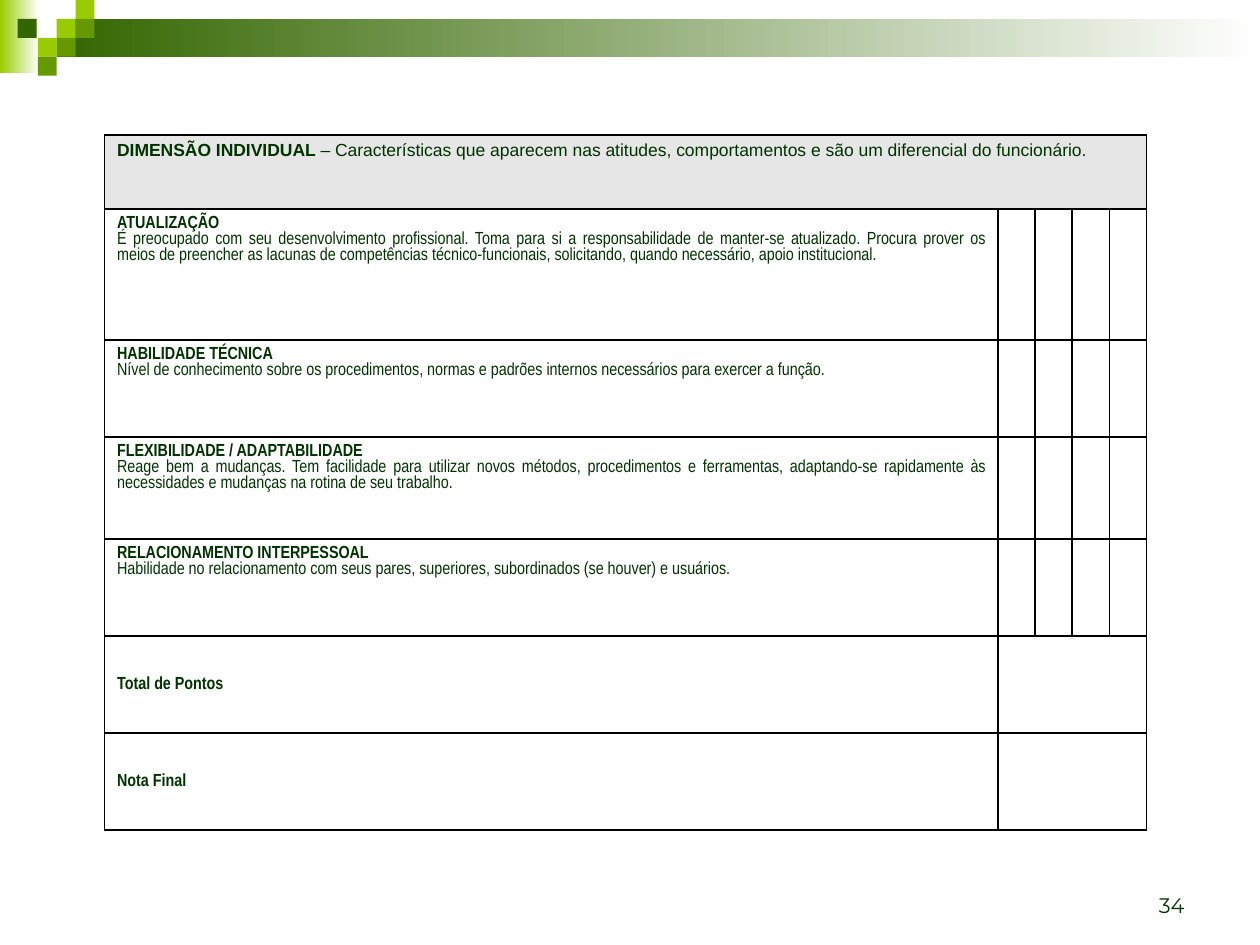
from typing import NamedTuple

from lxml.etree import SubElement
from pptx import Presentation
from pptx.dml.color import RGBColor
from pptx.enum.shapes import MSO_SHAPE as Shape
from pptx.enum.text import MSO_ANCHOR as Anchor, PP_ALIGN as Align
from pptx.oxml.ns import qn
from pptx.util import Inches, Pt

INK = "003300"
LIME, LEAF, DARK, WHITE = "99CC00", "669900", "336600", "FFFFFF"
STEP = 0.15
NARROW = "Arial Narrow"


class Tile(NamedTuple):
    left: float
    row: int
    color: str


class Skill(NamedTuple):
    title: str
    text: str
    height: float


TILES = [
    Tile(0.45, 1, LIME),
    Tile(0.6, 0, LIME),
    Tile(0.6, 1, LEAF),
    Tile(0.3, 2, LIME),
    Tile(0.14, 1, DARK),
    Tile(0.45, 2, LEAF),
    Tile(0.3, 3, LEAF),
]

SKILLS = [
    Skill("ATUALIZAÇÃO",
          "É preocupado com seu desenvolvimento profissional. Toma para si a "
          "responsabilidade de manter-se atualizado. Procura prover os meios de "
          "preencher as lacunas de competências técnico-funcionais, solicitando, "
          "quando necessário, apoio institucional.", 1.04),
    Skill("HABILIDADE TÉCNICA",
          "Nível de conhecimento sobre os procedimentos, normas e padrões "
          "internos necessários para exercer a função.", 0.77),
    Skill("FLEXIBILIDADE / ADAPTABILIDADE",
          "Reage bem a mudanças. Tem facilidade para utilizar novos métodos, "
          "procedimentos e ferramentas, adaptando-se rapidamente às necessidades "
          "e mudanças na rotina de seu trabalho.", 0.81),
    Skill("RELACIONAMENTO INTERPESSOAL",
          "Habilidade no relacionamento com seus pares, superiores, "
          "subordinados (se houver) e usuários.", 0.77),
]
TOTALS = ["Total de Pontos", "Nota Final"]
WIDTH, MAIN, MARKS = 8.27, 7.09, 4
COLS = [MAIN] + [(WIDTH - MAIN) / MARKS] * MARKS
ROWS = [0.59] + [skill.height for skill in SKILLS] + [0.77] * len(TOTALS)


def rgb(code: str) -> RGBColor:
    return RGBColor.from_string(code)


def write(para, text: str, *, font: str = NARROW, size: float = 10,
          bold: bool = False, align=Align.LEFT) -> None:
    para.alignment = align
    run = para.add_run()
    run.text = text
    run.font.name = font
    run.font.size = Pt(size)
    run.font.bold = bold
    run.font.color.rgb = rgb(INK)


def block(slide, left: float, top: float, width: float, height: float,
          color: str, fade: bool = False) -> None:
    rect = slide.shapes.add_shape(Shape.RECTANGLE, Inches(left), Inches(top),
                                  Inches(width), Inches(height))
    rect.shadow.inherit = False
    rect.line.fill.background()
    if fade:
        rect.fill.gradient()
        rect.fill.gradient_angle = 0
        for stop, code in zip(rect.fill.gradient_stops, (color, WHITE)):
            stop.color.rgb = rgb(code)
    else:
        rect.fill.solid()
        rect.fill.fore_color.rgb = rgb(color)


def border(cell) -> None:
    props = cell._tc.get_or_add_tcPr()
    for side in ("lnL", "lnR", "lnT", "lnB"):
        line = SubElement(props, qn(f"a:{side}"), w=str(Pt(1)))
        SubElement(SubElement(line, qn("a:solidFill")), qn("a:srgbClr"), val="000000")


def draw_table(slide) -> None:
    table = slide.shapes.add_table(
        len(ROWS), len(COLS), Inches(0.83), Inches(1.07),
        Inches(WIDTH), Inches(sum(ROWS))).table
    table.first_row = table.horz_banding = False
    for col, width in zip(table.columns, COLS):
        col.width = Inches(width)
    for row, height in zip(table.rows, ROWS):
        row.height = Inches(height)
        for cell in row.cells:
            border(cell)
            cell.fill.background()

    head = table.cell(0, 0)
    head.merge(table.cell(0, MARKS))
    head.fill.solid()
    head.fill.fore_color.rgb = rgb("E6E6E6")
    para = head.text_frame.paragraphs[0]
    write(para, "DIMENSÃO INDIVIDUAL", font="Arial", bold=True)
    write(para, " – Características que aparecem nas atitudes, comportamentos "
                "e são um diferencial do funcionário.", font="Arial")

    for row, skill in enumerate(SKILLS, 1):
        frame = table.cell(row, 0).text_frame
        write(frame.paragraphs[0], skill.title, bold=True, align=Align.JUSTIFY)
        write(frame.add_paragraph(), skill.text, align=Align.JUSTIFY)

    for row, label in enumerate(TOTALS, 1 + len(SKILLS)):
        cell = table.cell(row, 0)
        cell.vertical_anchor = Anchor.MIDDLE
        write(cell.text_frame.paragraphs[0], label, bold=True)
        table.cell(row, 1).merge(table.cell(row, MARKS))


def main() -> None:
    deck = Presentation()
    deck.slide_width, deck.slide_height = Inches(10), Inches(7.5)
    slide = deck.slides.add_slide(deck.slide_layouts[6])

    block(slide, 0, 0, 0.31, 0.58, LIME, fade=True)
    block(slide, 0.45, STEP, 9.55, 2 * STEP, DARK, fade=True)
    for tile in TILES:
        block(slide, tile.left, tile.row * STEP, STEP, STEP, tile.color)

    page = slide.shapes.add_textbox(Inches(7.17), Inches(6.83),
                                    Inches(2.33), Inches(0.5)).text_frame
    page.word_wrap = True
    page.vertical_anchor = Anchor.BOTTOM
    write(page.paragraphs[0], "34", font="Montserrat", size=12, align=Align.RIGHT)

    draw_table(slide)
    deck.save("out.pptx")


if __name__ == "__main__":
    main()
